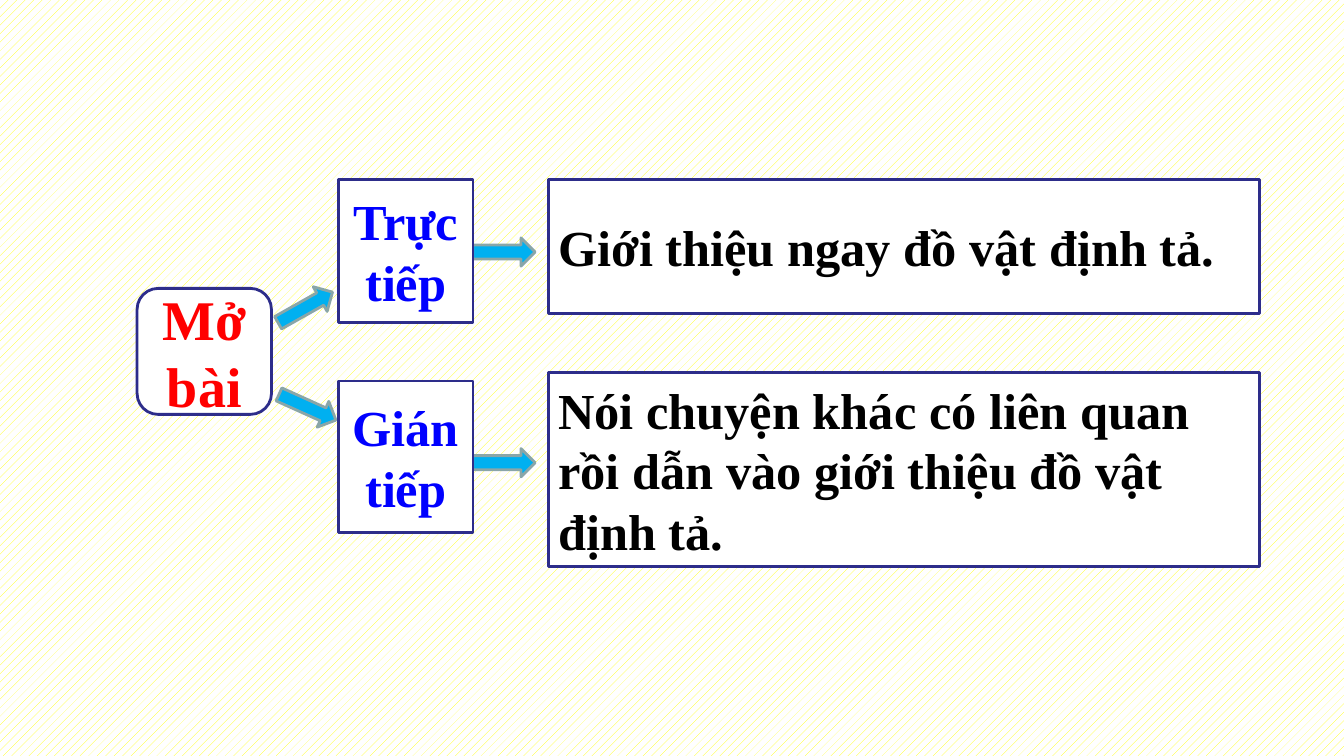
"""Build a slide showing the two ways to open a description."""
from pptx import Presentation
from pptx.dml.color import RGBColor
from pptx.enum import dml, shapes, text
from pptx.util import Pt

HUES = {"paper": "FFFFFF", "dots": "FFFF00", "edge": "2D2D8A", "arrow": "00B0F0",
        "rim": "8AA6A8", "root": "FF0000", "kind": "0000FF", "note": "000000"}
KINDS = shapes.MSO_SHAPE
MID, LEFT = text.PP_ALIGN.CENTER, text.PP_ALIGN.LEFT


def hue(name):
    return RGBColor.from_string(HUES[name])


def draw(kind, place, fill, line):
    shape = slide.shapes.add_shape(kind, *map(Pt, place))
    shape.shadow.inherit = False
    shape.fill.solid()
    shape.fill.fore_color.rgb = hue(fill)
    shape.line.color.rgb = hue(line)
    shape.line.width = Pt(2)
    return shape


deck = Presentation()
deck.slide_width, deck.slide_height = Pt(960), Pt(540)
slide = deck.slides.add_slide(deck.slide_layouts[6])

back = slide.background.fill
back.patterned()
back.pattern = dml.MSO_PATTERN.PERCENT_20
back.fore_color.rgb = hue("dots")
back.back_color.rgb = hue("paper")

arrows = [(197.3, 280.8, 24.3), (195.8, 209.5, 330.6), (337.7, 169.9, 0), (337.7, 320.4, 0)]
for left, top, turn in arrows:
    arrow = draw(KINDS.RIGHT_ARROW, (left, top, 44.6, 20.2), "arrow", "rim")
    arrow.rotation = turn

boxes = [
    ("Mở bài", KINDS.ROUNDED_RECTANGLE, (97.9, 206, 96, 90), "root", 40, MID),
    ("Trực tiếp", KINDS.FLOWCHART_PROCESS, (241.9, 128.2, 96, 102.2), "kind", 36, MID),
    ("Gián tiếp", KINDS.FLOWCHART_PROCESS, (241.9, 272.2, 96, 108), "kind", 36, MID),
    ("Giới thiệu ngay đồ vật định tả.", KINDS.RECTANGLE,
     (391.7, 128.2, 507.8, 95.8), "note", 36, LEFT),
    ("Nói chuyện khác có liên quan rồi dẫn vào giới thiệu đồ vật định tả.", KINDS.RECTANGLE,
     (391.7, 266.2, 507.8, 138.2), "note", 36, LEFT),
]
for words, kind, place, ink, size, align in boxes:
    frame = draw(kind, place, "paper", "edge").text_frame
    frame.word_wrap = True
    frame.vertical_anchor = text.MSO_ANCHOR.MIDDLE
    para = frame.paragraphs[0]
    para.alignment = align
    run = para.add_run()
    run.text = words
    style = {"name": "Times New Roman", "size": Pt(size), "bold": True}
    for key, value in style.items():
        setattr(run.font, key, value)
    run.font.color.rgb = hue(ink)

deck.save("out.pptx")
